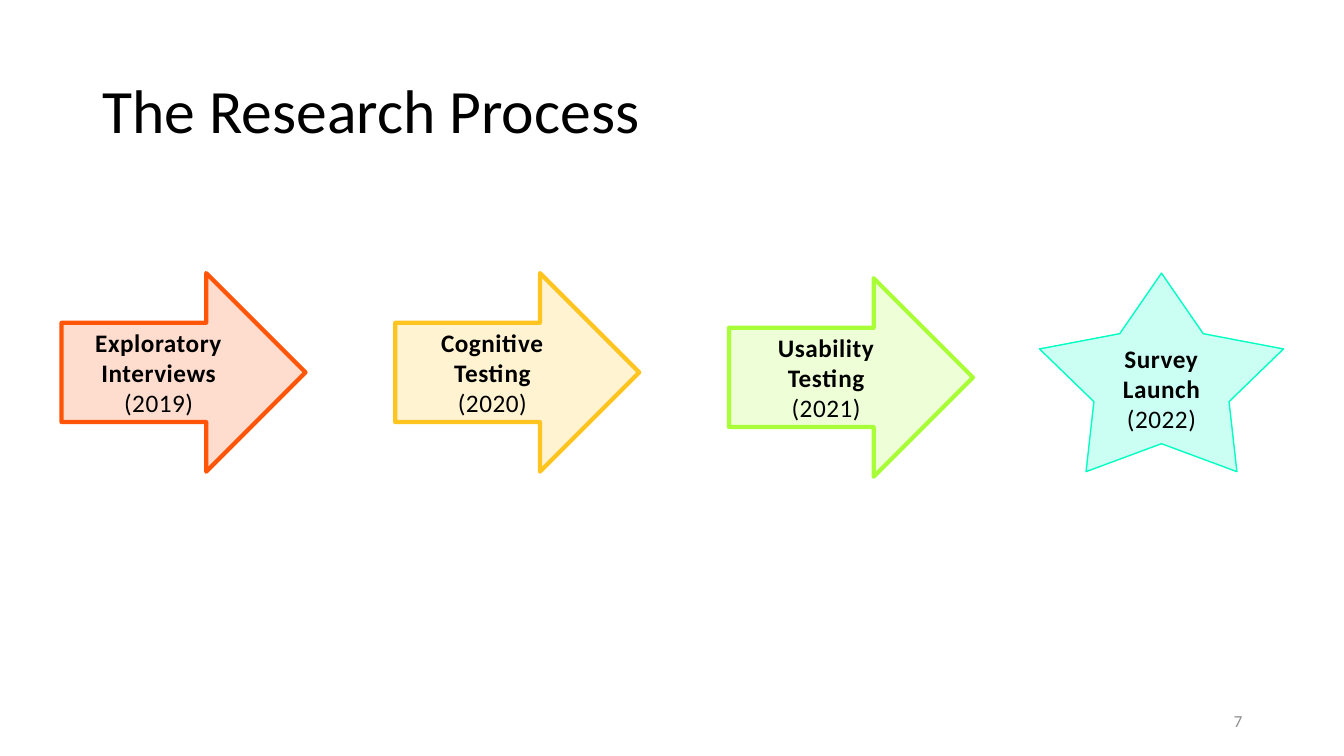
from dataclasses import dataclass

from pptx import Presentation
from pptx import util as u
from pptx.dml.color import RGBColor
from pptx.enum import shapes, text


@dataclass(frozen=True)
class Theme:
    font: str = "Calibri"
    ink: str = "000000"
    muted: str = "8C8C8C"
    title_size: int = 44
    step_size: int = 18
    number_size: int = 12


THEME = Theme()
WIDTH, HEIGHT = 13.33, 7.5

# Step grid: arrows share one pitch, the star closes the row
FIRST_LEFT, PITCH, STAR_LEFT = 0.61, 3.31, 10.31
STEP_TOP, STEP_WIDTH, STEP_HEIGHT = 2.71, 2.42, 1.97
ARROW = shapes.MSO_SHAPE.RIGHT_ARROW
STAR = shapes.MSO_SHAPE.STAR_5_POINT

# Name, year, preset, left, top, fill, line, line width
STEPS = [
    ("Exploratory Interviews", "(2019)", ARROW, FIRST_LEFT, STEP_TOP, "FFDDCE", "FF5509", 3),
    ("Cognitive Testing", "(2020)", ARROW, FIRST_LEFT + PITCH, STEP_TOP, "FFF3D2", "FFC41F", 3),
    ("Usability Testing", "(2021)", ARROW, FIRST_LEFT + 2 * PITCH, STEP_TOP + 0.05, "EEFFD7", "A9FF37", 3),
    ("Survey Launch", "(2022)", STAR, STAR_LEFT, STEP_TOP, "CCFFF3", "01FFC3", 1),
]


def write(paragraph, words, size, color=THEME.ink, bold=False,
          align=text.PP_ALIGN.LEFT, line_spacing=None, tracking=None):
    """Add one formatted run; tracking is in points."""
    paragraph.alignment = align
    if line_spacing:
        paragraph.line_spacing = line_spacing
    run = paragraph.add_run()
    run.text = words
    run.font.name = THEME.font
    run.font.size = u.Pt(size)
    run.font.bold = bold
    run.font.color.rgb = RGBColor.from_string(color)
    if tracking:
        run.font._element.set("spc", str(round(tracking * 100)))


def prepare_frame(shape):
    frame = shape.text_frame
    frame.word_wrap = True
    frame.vertical_anchor = text.MSO_ANCHOR.MIDDLE
    return frame


def add_label(slide, box, words, size, **style):
    shape = slide.shapes.add_textbox(*map(u.Inches, box))
    write(prepare_frame(shape).paragraphs[0], words, size, **style)


def add_step(slide, name, year, preset, left, top, fill, line, line_width):
    shape = slide.shapes.add_shape(
        preset, *map(u.Inches, (left, top, STEP_WIDTH, STEP_HEIGHT)))
    shape.shadow.inherit = False
    shape.fill.solid()
    shape.fill.fore_color.rgb = RGBColor.from_string(fill)
    shape.line.color.rgb = RGBColor.from_string(line)
    shape.line.width = u.Pt(line_width)
    if preset == STAR:
        shape.adjustments[0] = 0.277
    frame = prepare_frame(shape)
    style = dict(align=text.PP_ALIGN.CENTER, tracking=0.4)
    write(frame.paragraphs[0], name, THEME.step_size, bold=True, **style)
    write(frame.add_paragraph(), year, THEME.step_size, **style)


def main():
    presentation = Presentation()
    presentation.slide_width = u.Inches(WIDTH)
    presentation.slide_height = u.Inches(HEIGHT)
    slide = presentation.slides.add_slide(presentation.slide_layouts[6])

    # Title
    add_label(slide, (0.92, 0.4, 11.5, 1.45), "The Research Process",
              THEME.title_size, line_spacing=0.9)

    # Process steps
    for step in STEPS:
        add_step(slide, *step)

    # Slide number
    add_label(slide, (9.42, 6.95, 3, 0.4), "7", THEME.number_size,
              color=THEME.muted, align=text.PP_ALIGN.RIGHT)

    presentation.save("out.pptx")


if __name__ == "__main__":
    main()
